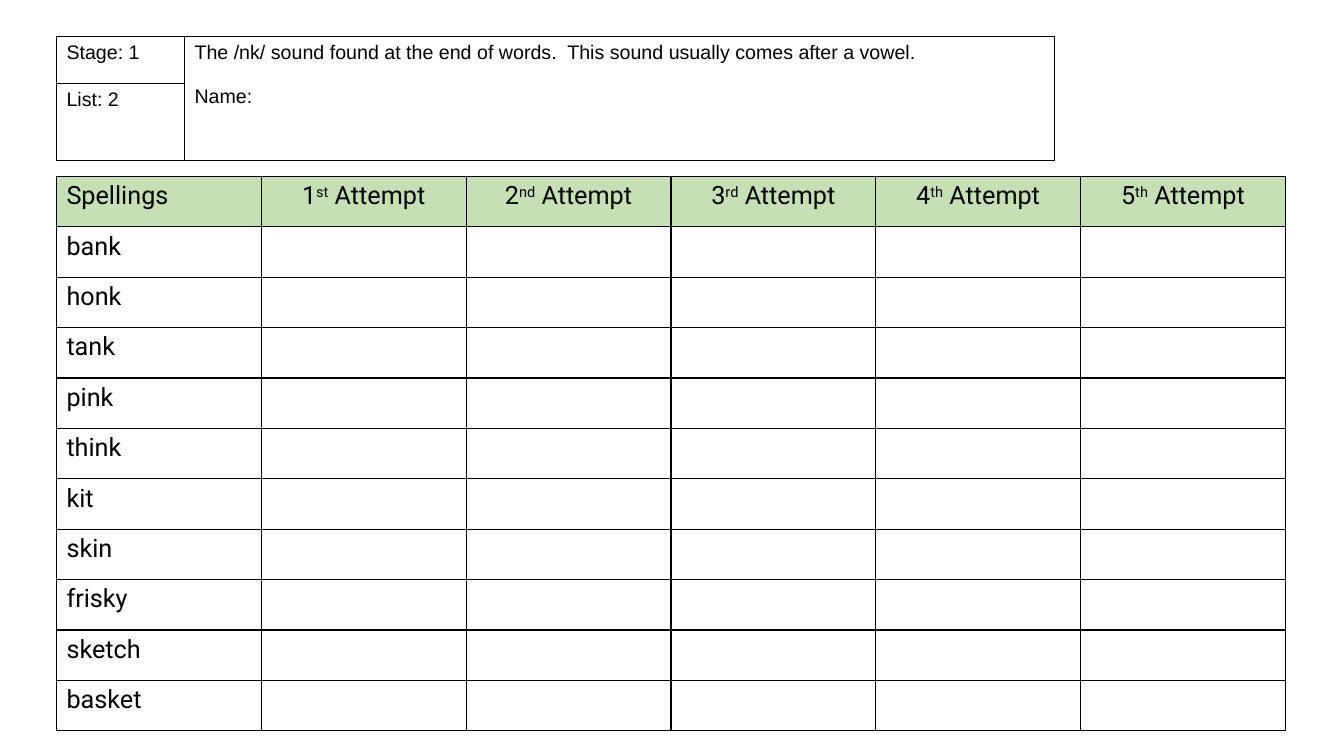
"""Build a spelling practice sheet with a heading table and an attempts grid."""
import lxml.etree
import pptx
import pptx.dml.color
import pptx.enum.text
import pptx.oxml.ns
import pptx.util

Inches = pptx.util.Inches
Pt = pptx.util.Pt


def colour(value):
    return pptx.dml.color.RGBColor.from_string(value)


class PracticeSheet:
    ink = "000000"
    header_fill = "C5E0B4"
    border_width = 1

    def __init__(self, slide):
        self.slide = slide

    def add_table(self, left, top, widths, heights):
        frame = self.slide.shapes.add_table(
            len(heights), len(widths), Inches(left), Inches(top),
            Inches(sum(widths)), Inches(sum(heights)))
        table = frame.table
        table.first_row = False
        table.horz_banding = False
        for column, width in zip(table.columns, widths):
            column.width = Inches(width)
        for row, height in zip(table.rows, heights):
            row.height = Inches(height)
        for cell in table.iter_cells():
            self.add_borders(cell)
            cell.fill.background()
        return table

    def add_borders(self, cell):
        qn = pptx.oxml.ns.qn
        properties = cell._tc.get_or_add_tcPr()
        for side in ("lnL", "lnR", "lnT", "lnB"):
            line = lxml.etree.SubElement(properties, qn(f"a:{side}"))
            line.set("w", str(Pt(self.border_width)))
            fill = lxml.etree.SubElement(line, qn("a:solidFill"))
            lxml.etree.SubElement(fill, qn("a:srgbClr")).set("val", self.ink)

    def add_text(self, para, parts, font, size, superscript=None):
        for index, part in enumerate(parts):
            span = para.add_run()
            span.text = part
            span.font.name = font
            span.font.size = Pt(size)
            span.font.color.rgb = colour(self.ink)
            if index == superscript:
                span._r.get_or_add_rPr().set("baseline", "30000")

    def add_heading(self, stage, word_list, rule, name_label):
        table = self.add_table(0.56, 0.36, [1.27, 8.63], [0.47, 0.47])
        table.cell(0, 1).merge(table.cell(1, 1))
        rule_frame = table.cell(0, 1).text_frame
        name_para = rule_frame.add_paragraph()
        name_para.space_before = Pt(16)
        for para, text in (
            (table.cell(0, 0).text_frame.paragraphs[0], stage),
            (table.cell(1, 0).text_frame.paragraphs[0], word_list),
            (rule_frame.paragraphs[0], rule),
            (name_para, name_label),
        ):
            self.add_text(para, [text], "Arial", 14)

    def add_attempts(self, title, words, ordinals):
        columns = len(ordinals) + 1
        rows = len(words) + 1
        table = self.add_table(0.56, 1.75, [12.19 / columns] * columns, [0.5] * rows)
        for row, word in enumerate([title] + words):
            para = table.cell(row, 0).text_frame.paragraphs[0]
            self.add_text(para, [word], "Roboto", 18)
        for column, ordinal in enumerate(ordinals, 1):
            para = table.cell(0, column).text_frame.paragraphs[0]
            para.alignment = pptx.enum.text.PP_ALIGN.CENTER
            parts = [str(column), ordinal, " Attempt"]
            self.add_text(para, parts, "Roboto", 18, superscript=1)
        for cell in table.rows[0].cells:
            cell.fill.solid()
            cell.fill.fore_color.rgb = colour(self.header_fill)


def main():
    deck = pptx.Presentation()
    deck.slide_width = Inches(13.33)
    deck.slide_height = Inches(7.5)
    sheet = PracticeSheet(deck.slides.add_slide(deck.slide_layouts[6]))
    sheet.add_attempts(
        "Spellings",
        ["bank", "honk", "tank", "pink", "think",
         "kit", "skin", "frisky", "sketch", "basket"],
        ["st", "nd", "rd", "th", "th"])
    sheet.add_heading(
        "Stage: 1", "List: 2",
        "The /nk/ sound found at the end of words.  This sound usually comes after a vowel.",
        "Name:")
    deck.save("out.pptx")


if __name__ == "__main__":
    main()
